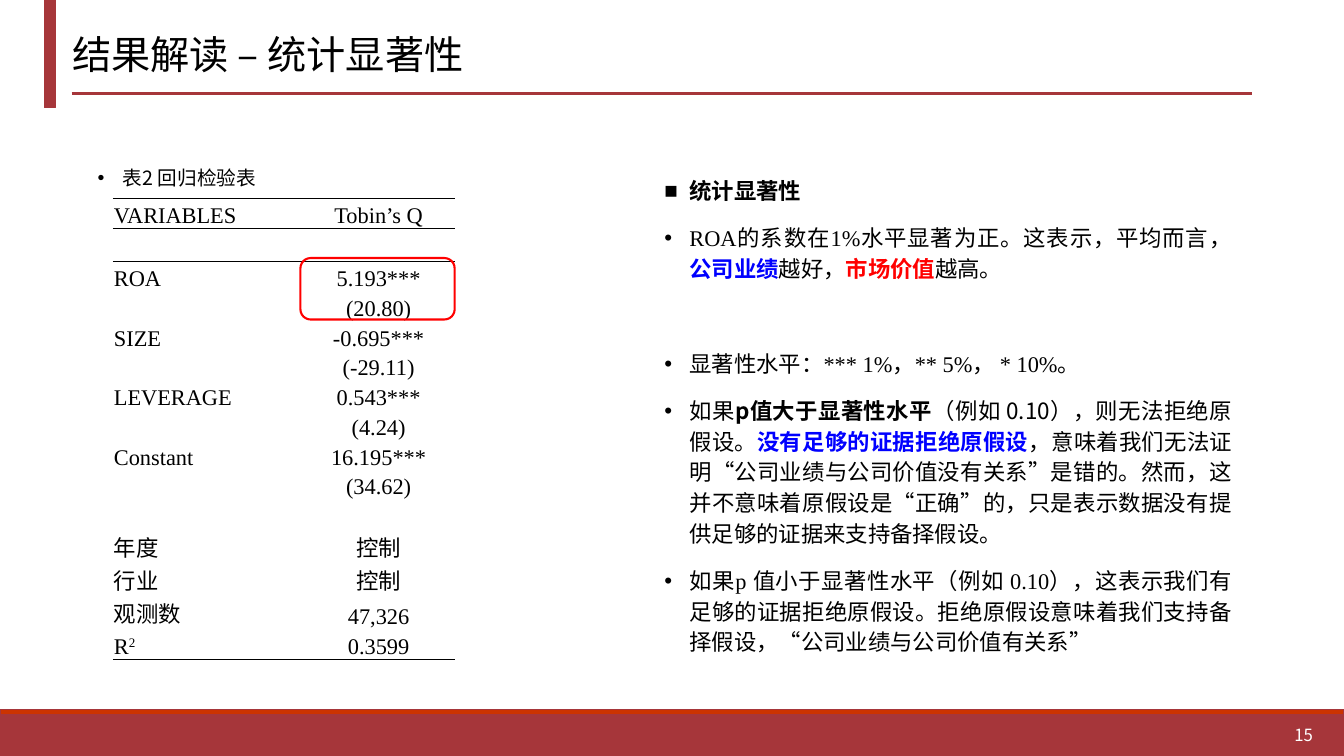
"""Builds the slide on statistical significance with its regression table."""
from lxml.etree import SubElement
from pptx import Presentation
from pptx.dml.color import RGBColor
from pptx.enum.shapes import MSO_CONNECTOR as Link, MSO_SHAPE as Shape
from pptx.enum.text import MSO_ANCHOR as Anchor, PP_ALIGN as Align
from pptx.oxml import parse_xml
from pptx.oxml.ns import nsdecls, qn
from pptx.util import Pt

PX = 9144
BRICK = RGBColor(0xA6, 0x36, 0x3A)
RUST = RGBColor(0xCC, 0x33, 0x00)
BLACK = RGBColor(0, 0, 0)
WHITE = RGBColor(0xFF, 0xFF, 0xFF)
BLUE = RGBColor(0, 0, 0xFF)
RED = RGBColor(0xFF, 0, 0)
ROMAN = "Times New Roman"
SANS = "Noto Sans CJK SC"


def write(par, text, size=16, face=ROMAN, color=BLACK, bold=False, raised=False):
    run = par.add_run()
    run.text = text
    font = run.font
    font.size, font.name, font.bold = Pt(size), face, bold
    font.color.rgb = color
    props = run._r.get_or_add_rPr()
    SubElement(props, qn("a:ea")).set("typeface", SANS)
    if raised:
        props.set("baseline", "30000")


def bullet(par, mark, after=12):
    par.alignment = Align.JUSTIFY
    par.line_spacing = 1.14
    par.space_after = Pt(after)
    props = par._p.get_or_add_pPr()
    props.set("marL", str(25 * PX))
    props.set("indent", str(-25 * PX))
    SubElement(props, qn("a:buFont")).set("typeface", "Arial")
    SubElement(props, qn("a:buChar")).set("char", mark)


deck = Presentation()
deck.slide_width, deck.slide_height = 1333 * PX, 750 * PX
slide = deck.slides.add_slide(deck.slide_layouts[6])
shapes = slide.shapes

for left, top, width, height, fill in [
    (0, 709, 1333, 42, BRICK),
    (0, 704, 1333, 5, RUST),
    (44, 0, 11, 107, BRICK),
]:
    bar = shapes.add_shape(Shape.RECTANGLE, left * PX, top * PX, width * PX, height * PX)
    bar.shadow.inherit = False
    bar.fill.solid()
    bar.fill.fore_color.rgb = fill
    bar.line.color.rgb = BRICK
    bar.line.width = Pt(1)

rule = shapes.add_connector(Link.STRAIGHT, 71 * PX, 93 * PX, 1242 * PX, 93 * PX)
rule.line.color.rgb = BRICK
rule.line.width = Pt(2.25)
SubElement(rule._element.spPr, qn("a:effectLst"))

frames = []
for left, top, width, height, anchor in [
    (62, 0, 1207, 107, Anchor.MIDDLE),
    (1012, 709, 300, 40, Anchor.MIDDLE),
    (87, 156, 218, 41, Anchor.TOP),
    (649, 167, 583, 389, Anchor.TOP),
]:
    frame = shapes.add_textbox(left * PX, top * PX, width * PX, height * PX).text_frame
    frame.word_wrap = True
    frame.vertical_anchor = anchor
    frames.append(frame)
title, number, label, body = frames

write(title.paragraphs[0], "结果解读 – 统计显著性", size=28, face=SANS)
number.paragraphs[0].alignment = Align.RIGHT
write(number.paragraphs[0], "15", size=12, face=SANS, color=WHITE)
bullet(label.paragraphs[0], "•")
write(label.paragraphs[0], "表2 回归检验表", size=14, face=SANS)

sans = {"face": SANS}
points = [
    ("■", 12, [("统计显著性", {"bold": True})]),
    ("•", 46, [
        ("ROA的系数在1%水平显著为正。这表示，平均而言，", {}),
        ("公司业绩", {"color": BLUE, "bold": True}),
        ("越好，", {}),
        ("市场价值", {"color": RED, "bold": True}),
        ("越高。", {}),
    ]),
    ("•", 12, [("显著性水平：*** 1%，** 5%， * 10%。", {})]),
    ("•", 12, [
        ("如果", sans),
        ("p值大于显著性水平", {"face": SANS, "bold": True}),
        ("（例如 0.10），则无法拒绝原假设。", sans),
        ("没有足够的证据拒绝原假设", {"face": SANS, "color": BLUE, "bold": True}),
        ("，意味着我们无法证明“公司业绩与公司价值没有关系”是错的。然而，"
         "这并不意味着原假设是“正确”的，只是表示数据没有提供足够的证据来支持备择假设。", sans),
    ]),
    ("•", 12, [
        ("如果p 值小于显著性水平（例如 0.10），这表示我们有足够的证据拒绝原假设。"
         "拒绝原假设意味着我们支持备择假设，", {}),
        ("“公司业绩与公司价值有关系”", sans),
    ]),
]
for i, (mark, after, runs) in enumerate(points):
    par = body.add_paragraph() if i else body.paragraphs[0]
    bullet(par, mark, after)
    for text, style in runs:
        write(par, text, **style)

rows = [
    ("VARIABLES", "Tobin’s Q"), ("", ""),
    ("ROA", "5.193***"), ("", "(20.80)"),
    ("SIZE", "-0.695***"), ("", "(-29.11)"),
    ("LEVERAGE", "0.543***"), ("", "(4.24)"),
    ("Constant", "16.195***"), ("", "(34.62)"), ("", ""),
    ("年度", "控制"), ("行业", "控制"), ("观测数", "47,326"), ("R", "0.3599"),
]
last = len(rows) - 1
tall = {1, 11, 12, 13}
edges = {0: ("lnT", "lnB"), 1: ("lnT",), last: ("lnB",)}
grid = shapes.add_table(len(rows), 2, 112 * PX, 197 * PX, 339 * PX, 443 * PX).table
grid.first_row = grid.horz_banding = False
grid._tbl.tblPr.find(qn("a:tableStyleId")).text = "{2D5ABB26-0587-4C30-8999-92F81FD0307C}"
for col, width in zip(grid.columns, (188, 151)):
    col.width = width * PX
for i, pair in enumerate(rows):
    grid.rows[i].height = 33 * PX if i in tall else 443 * PX // len(rows)
    for j, text in enumerate(pair):
        cell = grid.cell(i, j)
        cell.margin_left = cell.margin_right = cell.margin_top = PX
        cell.margin_bottom = 0
        cell.vertical_anchor = Anchor.BOTTOM
        for edge in edges.get(i, ()):
            cell._tc.get_or_add_tcPr().append(parse_xml(
                f'<a:{edge} {nsdecls("a")} w="6350"><a:solidFill>'
                f'<a:srgbClr val="{BLACK}"/></a:solidFill></a:{edge}>'))
        cell.fill.background()
        par = cell.text_frame.paragraphs[0]
        par.alignment = Align.CENTER if j else Align.LEFT
        if text:
            write(par, text, face=SANS if i in (11, 12) else ROMAN)
        else:
            SubElement(par._p, qn("a:endParaRPr")).set("sz", "1200")
write(grid.cell(last, 0).text_frame.paragraphs[0], "2", raised=True)

ring = shapes.add_shape(Shape.ROUNDED_RECTANGLE, 298 * PX, 256 * PX, 153 * PX, 61 * PX)
ring.shadow.inherit = False
ring.fill.background()
ring.line.color.rgb = RED
ring.line.width = Pt(1.5)

deck.save("out.pptx")
